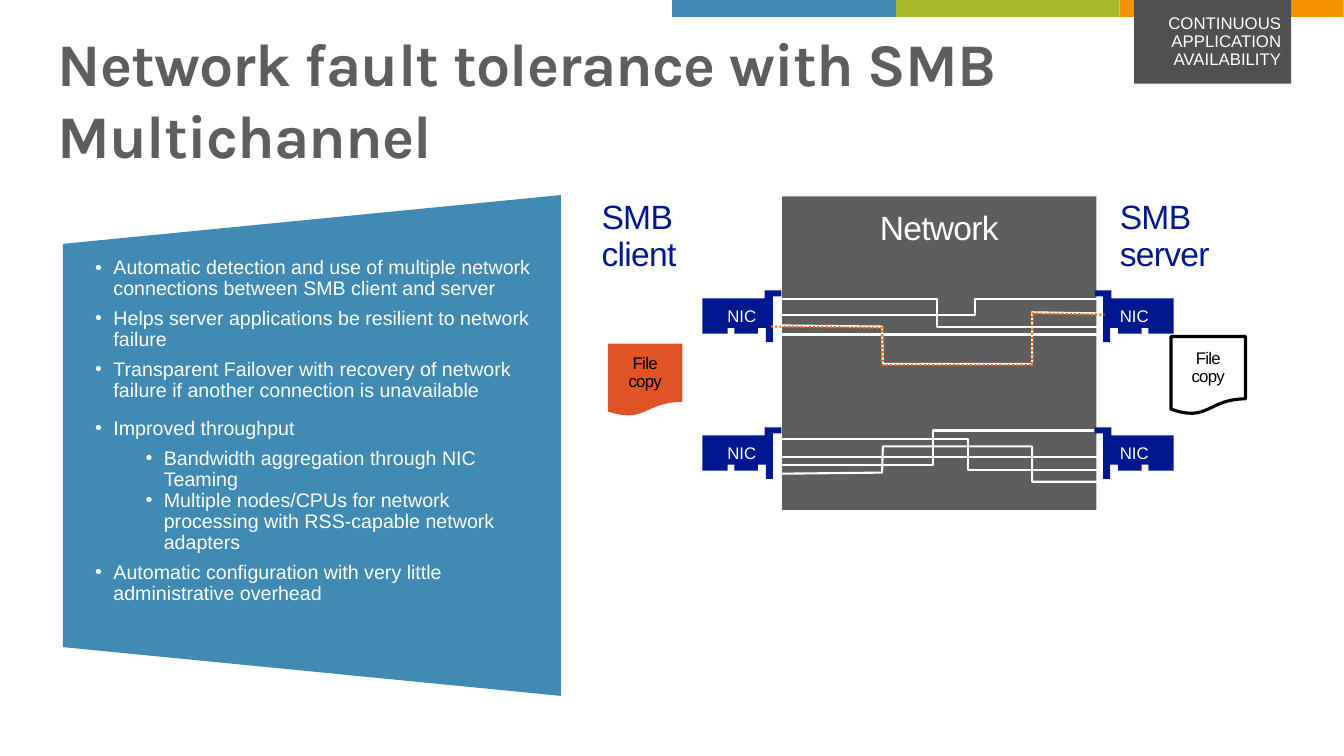
from lxml import etree
from pptx import Presentation, util as u
from pptx.dml.color import RGBColor
from pptx.enum import dml, shapes, text
from pptx.oxml import ns

COLORS = {
    "blue": "418AB3", "green": "A6B727", "amber": "F69200", "gray": "5E5E5E",
    "charcoal": "505050", "navy": "00188F", "rust": "DF5327", "orange": "FF6600",
    "white": "FFFFFF", "black": "000000", "soft white": "FFFFFE",
}
SHAPE = shapes.MSO_SHAPE
ALIGN = text.PP_ALIGN
ANCHOR = text.MSO_ANCHOR
INSETS = (0.25, 0.13, 0.25, 0.13)
HEADED_INSETS = (0.25, 0.38, 0.25, 0.13)

# Left-hand network card: offsets from its outer top corner, mirrored on the right
NIC_OUTLINE = [
    (1.57, 0), (1.99, 0), (1.99, 0.15), (1.78, 0.15), (1.78, 1.3), (1.6, 1.3),
    (1.6, 0.94), (1.4, 0.94), (1.4, 1.09), (0.81, 1.09), (0.81, 0.94),
    (0.64, 0.94), (0.64, 1.09), (0, 1.09), (0, 0.2), (1.57, 0.2),
]
NIC_SIDES = [(17.7, 1), (29.58, -1)]
NIC_TOPS = [7.32, 10.77]

# Start, end and position of the bend
BENT_WIRES = [
    ((19.43, 7.54), (27.81, 8.23), 0.5),
    ((19.51, 7.95), (27.81, 7.54), 0.61),
    ((19.43, 11.73), (27.58, 10.85), 0.5),
    ((19.51, 11.07), (27.84, 11.84), 0.587),
]
STRAIGHT_WIRE_HEIGHTS = [8.43, 11.51]
DETOUR_X = [19.43, 22.23, 22.25, 26.01, 26.01, 27.84]
UPPER_DETOUR_Y = [8.2, 8.23, 9.17, 9.17, 7.87, 7.9]
LOWER_DETOUR_Y = [11.94, 11.91, 11.25, 11.25, 12.14, 12.14]

# Text, level, space before, space after
BENEFITS = [
    ("Automatic detection and use of multiple network connections between SMB "
     "client and server", 0, 0, 0),
    ("Helps server applications be resilient to network failure", 0, 6, 0),
    ("Transparent Failover with recovery of network failure if another "
     "connection is unavailable", 0, 6, 6),
    ("Improved throughput", 0, 6, 6),
    ("Bandwidth aggregation through NIC Teaming", 1, 0, 0),
    ("Multiple nodes/CPUs for network processing with RSS-capable network "
     "adapters", 1, 0, 0),
    ("Automatic configuration with very little administrative overhead", 0, 6, 6),
]


def rgb(color):
    return RGBColor.from_string(COLORS[color])


def paint(shape, fill=None, line=None, width=1.5):
    shape.shadow.inherit = False
    if fill:
        shape.fill.solid()
        shape.fill.fore_color.rgb = rgb(fill)
    else:
        shape.fill.background()
    if line:
        shape.line.color.rgb = rgb(line)
        shape.line.width = u.Pt(width)
    else:
        shape.line.fill.background()


def add_block(slide, kind, box, fill=None, line=None, width=1.5):
    shape = slide.shapes.add_shape(kind, *map(u.Cm, box))
    paint(shape, fill, line, width)
    return shape


def write(shape, content, size, color, align=ALIGN.LEFT, anchor=ANCHOR.TOP,
          insets=INSETS, spacing=0.9, tracking=0, font="Arial", bold=False):
    """Fill a shape with text, one paragraph per line; tracking is in points."""
    frame = shape.text_frame
    frame.text = content
    frame.word_wrap = True
    frame.vertical_anchor = anchor
    (frame.margin_left, frame.margin_top,
     frame.margin_right, frame.margin_bottom) = map(u.Cm, insets)
    for paragraph in frame.paragraphs:
        paragraph.alignment = align
        paragraph.line_spacing = spacing
        for run in paragraph.runs:
            run.font.name = font
            run.font.size = u.Pt(size)
            run.font.bold = bold
            run.font.color.rgb = rgb(color)
            if tracking:
                run.font._element.set("spc", str(round(tracking * 100)))


def add_path(slide, points, close):
    (start_x, start_y), *others = [(u.Cm(x), u.Cm(y)) for x, y in points]
    builder = slide.shapes.build_freeform(start_x, start_y)
    builder.add_line_segments(others, close=close)
    return builder.convert_to_shape()


def add_nic(slide, outer_edge, direction, top):
    points = [(outer_edge + direction * x, top + y) for x, y in NIC_OUTLINE]
    card = add_path(slide, points, close=True)
    paint(card, "navy")
    write(card, "NIC", 12, "white", ALIGN.CENTER, ANCHOR.MIDDLE, (0, 0, 0, 0), 1.0)


def add_wire(slide, start, end, bend=None):
    kind = shapes.MSO_CONNECTOR.ELBOW if bend else shapes.MSO_CONNECTOR.STRAIGHT
    wire = slide.shapes.add_connector(kind, *map(u.Cm, start + end))
    wire.line.color.rgb = rgb("white")
    wire.line.width = u.Pt(1.5)
    properties = wire._element.spPr
    etree.SubElement(properties, ns.qn("a:effectLst"))
    if bend:
        adjustments = properties.find(ns.qn("a:prstGeom")).get_or_add_avLst()
        etree.SubElement(adjustments, ns.qn("a:gd"), name="adj1",
                         fmla=f"val {round(bend * 100000)}")


def add_detour(slide, heights, color, shift=0.0):
    points = [(x, y + shift) for x, y in zip(DETOUR_X, heights)]
    detour = add_path(slide, points, close=False)
    paint(detour, line=color)
    return detour


def add_file(slide, box, **style):
    document = add_block(slide, SHAPE.FLOWCHART_DOCUMENT, box, **style)
    write(document, "File\ncopy", 12, "black", ALIGN.CENTER, ANCHOR.MIDDLE,
          tracking=-0.5)


def add_benefits(slide):
    """Add the trapezoid, turned on its side with its text kept upright."""
    panel = add_block(slide, SHAPE.TRAPEZOID, (1.55, 4.95, 12.62, 12.55), "blue")
    panel.rotation = 270
    panel.adjustments[0] = 0.098
    write(panel, "\n".join(item[0] for item in BENEFITS), 14, "soft white",
          insets=(0, 0, 0.76, 0.38))
    panel.text_frame._txBody.bodyPr.set("vert", "vert")
    for paragraph, (_, level, before, after) in zip(panel.text_frame.paragraphs, BENEFITS):
        properties = paragraph._p.get_or_add_pPr()
        properties.set("marL", str(u.Cm(0.46 + 1.27 * level)))
        properties.set("indent", str(u.Cm(-0.46)))
        etree.SubElement(properties, ns.qn("a:buFont"), typeface="Arial")
        etree.SubElement(properties, ns.qn("a:buChar"), char="•")
        paragraph.level = level
        paragraph.space_before = u.Pt(before)
        paragraph.space_after = u.Pt(after)


def add_network(slide):
    network = add_block(slide, SHAPE.RECTANGLE, (19.71, 4.95, 7.92, 7.9), "gray")
    write(network, "Network", 24, "white", ALIGN.CENTER, insets=HEADED_INSETS,
          tracking=-0.5)
    for left, label in [(14.91, "SMB\nclient"), (27.97, "SMB\nserver")]:
        host = add_block(slide, SHAPE.RECTANGLE, (left, 4.93, 4.39, 7.9), "white")
        write(host, label, 24, "navy", tracking=-0.5)
    add_file(slide, (29.51, 8.48, 1.88, 1.96), line="black", width=2.25)
    for start, end, bend in BENT_WIRES:
        add_wire(slide, start, end, bend)
    for height in STRAIGHT_WIRE_HEIGHTS:
        add_wire(slide, (19.46, height), (27.86, height))
    for heights in (UPPER_DETOUR_Y, LOWER_DETOUR_Y):
        add_detour(slide, heights, "white")
    for top in NIC_TOPS:
        for outer_edge, direction in NIC_SIDES:
            add_nic(slide, outer_edge, direction, top)
    copy_route = add_detour(slide, UPPER_DETOUR_Y, "orange", shift=0.03)
    copy_route.line.dash_style = dml.MSO_LINE.ROUND_DOT
    add_file(slide, (15.32, 8.66, 1.88, 1.83), fill="rust")


def main():
    presentation = Presentation()
    presentation.slide_width = u.Cm(33.87)
    presentation.slide_height = u.Cm(19.05)
    slide = presentation.slides.add_slide(presentation.slide_layouts[6])
    for index, color in enumerate(["blue", "green", "amber"]):
        add_block(slide, SHAPE.RECTANGLE, (16.94 + 5.64 * index, 0, 5.64, 0.43), color)
    title = slide.shapes.add_textbox(*map(u.Cm, (1.45, 0.64, 30.96, 3.68)))
    write(title, "Network fault tolerance with SMB Multichannel", 43.2, "gray",
          anchor=ANCHOR.MIDDLE, insets=(0, 0, 0, 0), spacing=1.0, tracking=-0.6,
          font="Karla", bold=True)
    add_network(slide)
    add_benefits(slide)
    tag = add_block(slide, SHAPE.RECTANGLE, (28.58, 0, 3.96, 2.11), "charcoal")
    write(tag, "CONTINUOUS APPLICATION AVAILABILITY", 12, "white", ALIGN.RIGHT,
          insets=(0.51, 0.38, 0.25, 0.13))
    presentation.save("out.pptx")


if __name__ == "__main__":
    main()
